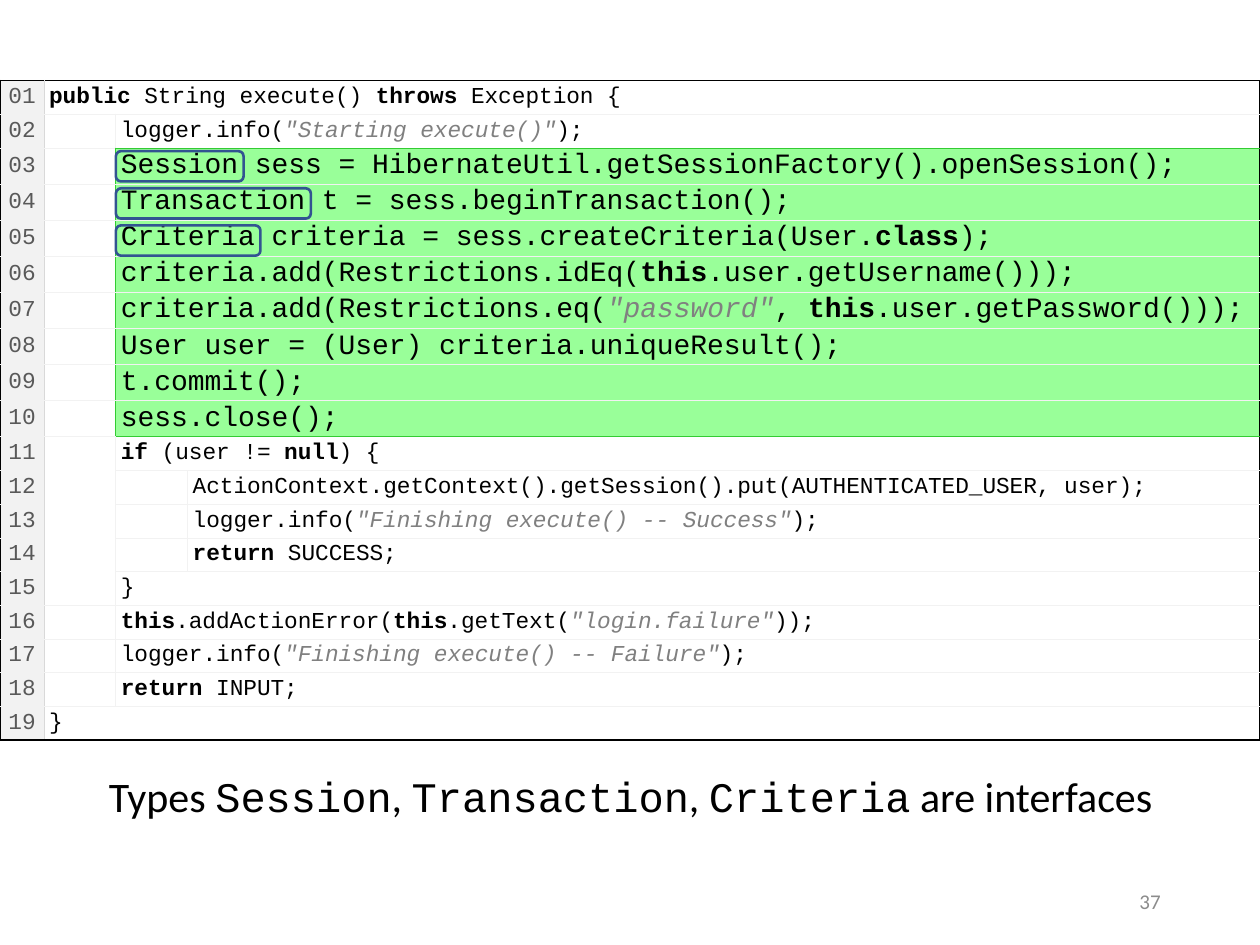
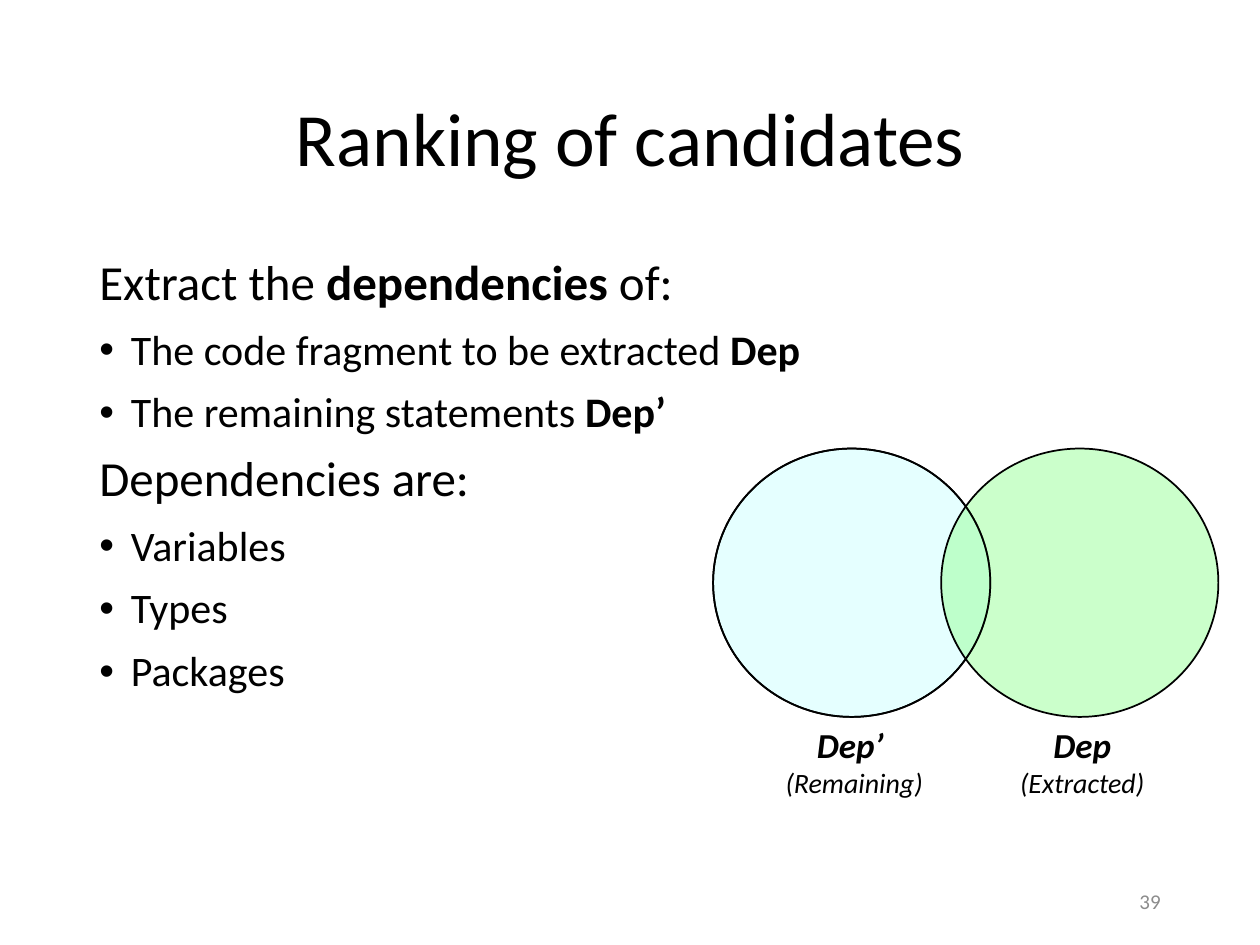
import pptx
import pptx.dml.color
import pptx.enum.shapes
import pptx.enum.text
import pptx.oxml
import pptx.oxml.ns
import pptx.util
from lxml import etree

RGBColor = pptx.dml.color.RGBColor
Pt = pptx.util.Pt
Shape = pptx.enum.shapes.MSO_SHAPE
Align = pptx.enum.text.PP_ALIGN
Anchor = pptx.enum.text.MSO_ANCHOR
qn = pptx.oxml.ns.qn

# Shared style
BLACK = RGBColor(0x00, 0x00, 0x00)
WHITE = RGBColor(0xFF, 0xFF, 0xFF)
PALE = RGBColor(0xF2, 0xF2, 0xF2)
SILVER = RGBColor(0xD9, 0xD9, 0xD9)
LITERAL = RGBColor(0x80, 0x80, 0x80)
LINE_NUMBER = RGBColor(0x59, 0x59, 0x59)
FOOTER = RGBColor(0x8C, 0x8C, 0x8C)
GREEN = RGBColor(0x99, 0xFF, 0x99)
GREEN_EDGE = RGBColor(0x33, 0xCC, 0x33)
CYAN = RGBColor(0xCC, 0xFF, 0xFF)
FRAME_BLUE = RGBColor(0x32, 0x54, 0x91)
BODY_FONT, CODE_FONT = "Calibri", "Courier New"

SLIDE_WIDTH, SLIDE_HEIGHT = pptx.util.Inches(10), pptx.util.Inches(7.5)
TITLE_ONLY, BLANK = 5, 6

# Code listing: indent level and text; backticks mark keywords
CODE = [
    (0, "`public `String execute() `throws `Exception {"),
    (1, 'logger.info("Starting execute()");'),
    (1, "Session sess = HibernateUtil.getSessionFactory().openSession();"),
    (1, "Transaction t = sess.beginTransaction();"),
    (1, "Criteria criteria = sess.createCriteria(User.`class`);"),
    (1, "criteria.add(Restrictions.idEq(`this`.user.getUsername()));"),
    (1, 'criteria.add(Restrictions.eq("password", `this`.user.getPassword()));'),
    (1, "User user = (User) criteria.uniqueResult();"),
    (1, "t.commit();"),
    (1, "sess.close();"),
    (1, "`if` (user != `null`) {"),
    (2, "ActionContext.getContext().getSession().put(AUTHENTICATED_USER, user);"),
    (2, 'logger.info("Finishing execute() -- Success");'),
    (2, "`return` SUCCESS;"),
    (1, "}"),
    (1, '`this`.addActionError(`this`.getText("login.failure"));'),
    (1, 'logger.info("Finishing execute() -- Failure");'),
    (1, "`return `INPUT;"),
    (0, "}"),
]
HIGHLIGHTED = range(2, 10)
IF_BLOCK = (10, 14)
COLUMN_SHARES = (3.5, 5.7, 5.7, 85.1)
INTERFACES = ("Session", "Transaction", "Criteria")

BODY = [
    (False, "Extract the `dependencies` of:"),
    (True, "The code fragment to be extracted `Dep`"),
    (True, "The remaining statements `Dep’`"),
    (False, "Dependencies are:"),
    (True, "Variables"),
    (True, "Types"),
    (True, "Packages"),
]


def across(share):
    """Percent of the slide's width."""
    return int(SLIDE_WIDTH * share / 100)


def down(share):
    """Percent of the slide's height."""
    return int(SLIDE_HEIGHT * share / 100)


def area(left, top, width, height):
    return across(left), down(top), across(width), down(height)


def set_font(font, size, color=BLACK, name=BODY_FONT):
    font.size, font.name = Pt(size), name
    font.color.rgb = color


def add_marked_runs(paragraph, text):
    """Yield (run, marked) for text whose marked parts stand in backticks."""
    for index, part in enumerate(text.split("`")):
        if part:
            run = paragraph.add_run()
            run.text = part
            yield run, index % 2 == 1


def embolden_marked(paragraph, text):
    for run, marked in add_marked_runs(paragraph, text):
        if marked:
            run.font.bold = True


def add_textbox(slide, *place, wrap=True):
    frame = slide.shapes.add_textbox(*area(*place)).text_frame
    frame.word_wrap = wrap
    return frame


def add_outline(slide, preset, place, color, width, fill=None):
    shape = slide.shapes.add_shape(preset, *place)
    shape.shadow.inherit = False
    shape.line.color.rgb, shape.line.width = color, Pt(width)
    if fill is None:
        shape.fill.background()
    else:
        shape.fill.solid()
        shape.fill.fore_color.rgb = fill
        color_element = shape.fill._xPr.find(".//" + qn("a:srgbClr"))
        etree.SubElement(color_element, qn("a:alpha"), val="50000")
    return shape


def add_slide_number(slide, number):
    frame = add_textbox(slide, 70.6, 92.67, 22.5, 5.33)
    frame.vertical_anchor = Anchor.MIDDLE
    paragraph = frame.paragraphs[0]
    paragraph.text, paragraph.alignment = str(number), Align.RIGHT
    set_font(paragraph.font, 12, FOOTER)


# Code table
def set_borders(cell, left, right, top, bottom):
    properties = cell._tc.get_or_add_tcPr()
    for index, (side, color) in enumerate(zip("LRTB", (left, right, top, bottom))):
        width = Pt(1 if color == BLACK else 0.5)
        line = etree.Element(qn(f"a:ln{side}"), w=str(width))
        fill = etree.SubElement(line, qn("a:solidFill"))
        etree.SubElement(fill, qn("a:srgbClr"), val=str(color))
        properties.insert(index, line)


def prepare_cell(cell, fill):
    cell.margin_left = cell.margin_right = pptx.util.Inches(0.04)
    cell.margin_top = cell.margin_bottom = pptx.util.Inches(0.01)
    cell.vertical_anchor = Anchor.MIDDLE
    if fill is None:
        cell.fill.background()
    else:
        cell.fill.solid()
        cell.fill.fore_color.rgb = fill
    # Keeps empty cells from stretching their row
    cell.text_frame.paragraphs[0]._p.get_or_add_endParaRPr().set("sz", "1300")


def write_code(cell, text, size):
    paragraph = cell.text_frame.paragraphs[0]
    set_font(paragraph.font, size, name=CODE_FONT)
    for index, part in enumerate(text.split('"')):
        if index % 2:
            run = paragraph.add_run()
            run.text = f'"{part}"'
            run.font.italic = True
            run.font.color.rgb = LITERAL
        else:
            embolden_marked(paragraph, part)


def edge_color(row):
    """Colour of the rule above a row of code."""
    if row in (0, len(CODE)):
        return BLACK
    changes = (row in HIGHLIGHTED) != (row - 1 in HIGHLIGHTED)
    return GREEN_EDGE if changes else PALE


def add_code_row(table, row, level, text):
    lit = row in HIGHLIGHTED
    last = row == len(CODE) - 1
    table.rows[row].height = Pt(19.85 if lit else 19.25)
    side = GREEN_EDGE if lit else PALE
    code_column = level + 1

    # Line number
    number = table.cell(row, 0)
    prepare_cell(number, PALE)
    paragraph = number.text_frame.paragraphs[0]
    paragraph.text, paragraph.alignment = f"{row + 1:02}", Align.CENTER
    set_font(paragraph.font, 13, LINE_NUMBER, CODE_FONT)
    set_borders(number, BLACK, SILVER, BLACK if row == 0 else PALE,
                BLACK if last else PALE)

    # Indents
    for column in range(1, code_column):
        indent = table.cell(row, column)
        prepare_cell(indent, WHITE)
        set_borders(indent, SILVER if column == 1 else PALE, side, PALE, PALE)

    # Code
    for column in range(code_column, len(COLUMN_SHARES)):
        prepare_cell(table.cell(row, column), GREEN if lit else None)
    code = table.cell(row, code_column)
    write_code(code, text, 16 if lit else 13)
    set_borders(code, SILVER if level == 0 else side, BLACK,
                edge_color(row), edge_color(row + 1))
    if level < 2:
        code.merge(table.cell(row, len(COLUMN_SHARES) - 1))


def add_code_table(slide):
    frame = slide.shapes.add_table(len(CODE), len(COLUMN_SHARES),
                                   *area(0, 8.53, 100, 68.6))
    table = frame.table
    table.first_row = table.horz_banding = False
    for column, share in zip(table.columns, COLUMN_SHARES):
        column.width = across(share)
    for row, (level, text) in enumerate(CODE):
        add_code_row(table, row, level, text)
    first, last = IF_BLOCK
    table.cell(first, 1).merge(table.cell(last, 1))


def build_code_slide(presentation):
    slide = presentation.slides.add_slide(presentation.slide_layouts[BLANK])
    add_slide_number(slide, 37)
    add_code_table(slide)

    # Frames around the interface names
    for index, name in enumerate(INTERFACES):
        width = Pt(9.6) * len(name) + pptx.util.Inches(0.08)
        place = (across(9.2), down(16 + 3.93 * index), width, down(3.2))
        add_outline(slide, Shape.ROUNDED_RECTANGLE, place, FRAME_BLUE, 1.5)

    # Caption
    paragraph = add_textbox(slide, 6.7, 80.93, 86.7, 6.67, wrap=False).paragraphs[0]
    paragraph.alignment = Align.CENTER
    set_font(paragraph.font, 24)
    names = ", ".join(f"`{name}`" for name in INTERFACES)
    for run, marked in add_marked_runs(paragraph, f"Types {names} are interfaces"):
        run.font.name = CODE_FONT if marked else BODY_FONT


# Ranking slide
def add_title(slide, text):
    title = slide.shapes.title
    title.left, title.top, title.width, title.height = area(6.9, 5.33, 86.2, 19.33)
    title.text_frame.vertical_anchor = Anchor.MIDDLE
    paragraph = title.text_frame.paragraphs[0]
    paragraph.text, paragraph.alignment = text, Align.CENTER
    paragraph.line_spacing = 0.9
    set_font(paragraph.font, 43)


def add_bullet(paragraph):
    properties = paragraph._p.get_or_add_pPr()
    indent = pptx.util.Inches(0.25)
    properties.set("marL", str(indent))
    properties.set("indent", str(-indent))
    etree.SubElement(properties, qn("a:buFont"), typeface="Arial")
    etree.SubElement(properties, qn("a:buChar"), char="•")


def add_body(slide):
    frame = add_textbox(slide, 6.9, 26.67, 89.9, 63.47)
    for index, (bulleted, text) in enumerate(BODY):
        paragraph = frame.add_paragraph() if index else frame.paragraphs[0]
        paragraph.line_spacing = 0.9
        paragraph.space_before = Pt(10 if index else 0)
        if bulleted:
            add_bullet(paragraph)
        set_font(paragraph.font, 24 if bulleted else 28)
        embolden_marked(paragraph, text)


def add_set_label(slide, circle_left, name, note):
    frame = add_textbox(slide, circle_left - 1.6, 75.87, 25.6, 9.47)
    for index, (text, size) in enumerate(((name, 20), (note, 16))):
        paragraph = frame.add_paragraph() if index else frame.paragraphs[0]
        paragraph.text, paragraph.alignment = text, Align.CENTER
        set_font(paragraph.font, size)
        paragraph.font.italic = True
        paragraph.font.bold = index == 0


def build_ranking_slide(presentation):
    slide = presentation.slides.add_slide(presentation.slide_layouts[TITLE_ONLY])
    add_title(slide, "Ranking of candidates")
    add_body(slide)
    add_slide_number(slide, 39)

    # Overlapping sets, the left outline repeated on top
    remaining, extracted = 56.6, 74.7
    for left, fill in ((remaining, CYAN), (extracted, GREEN), (remaining, None)):
        add_outline(slide, Shape.OVAL, area(left, 47.47, 22, 28.4), BLACK, 1, fill)
    add_set_label(slide, remaining, "Dep’ ", "(Remaining)")
    add_set_label(slide, extracted, "Dep", "(Extracted)")


def main():
    presentation = pptx.Presentation()
    presentation.slide_width, presentation.slide_height = SLIDE_WIDTH, SLIDE_HEIGHT
    build_code_slide(presentation)
    build_ranking_slide(presentation)
    presentation.save("out.pptx")


if __name__ == "__main__":
    main()
